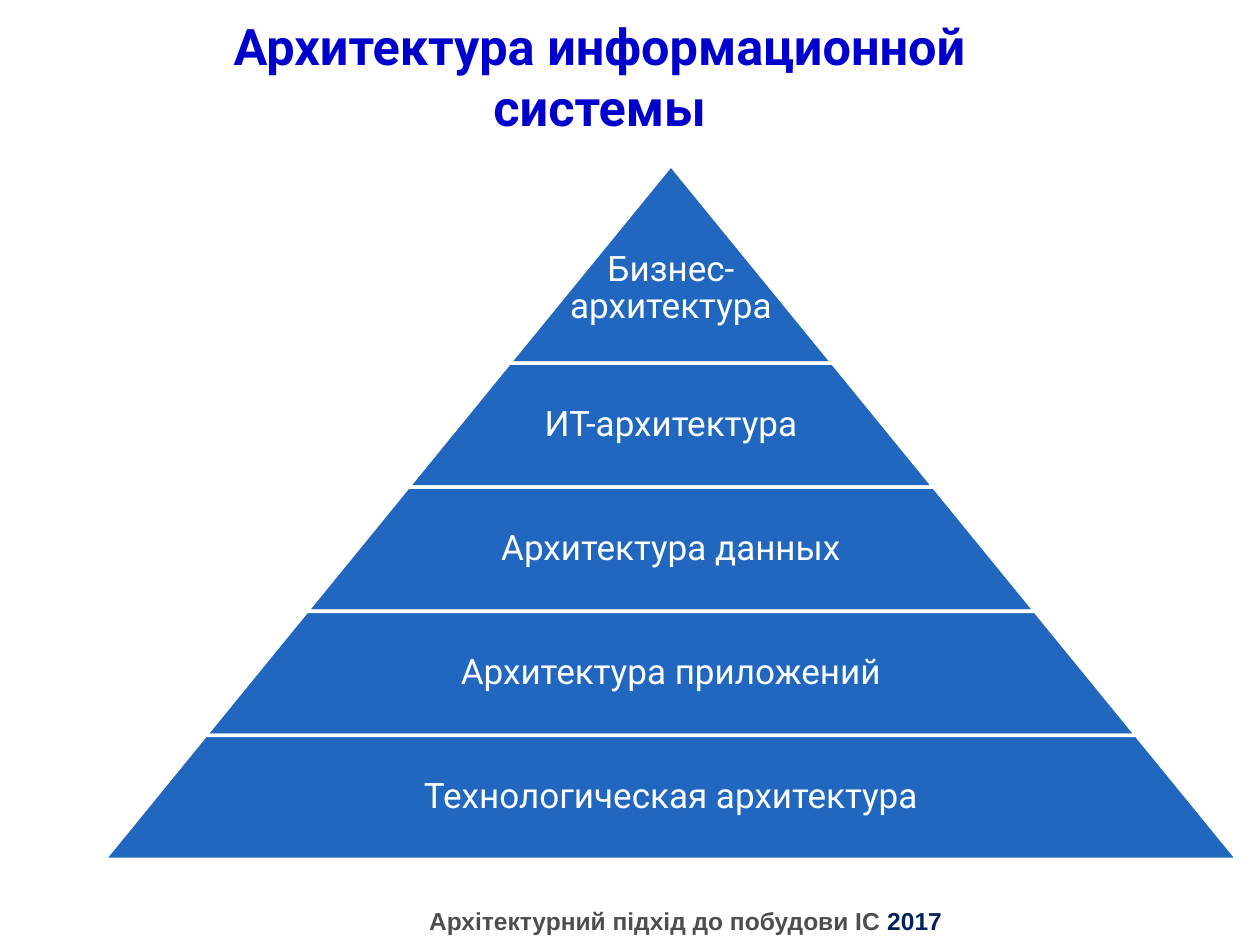
"""Build a slide with a five-level pyramid of information system architecture."""
from dataclasses import dataclass

from pptx import Presentation
from pptx.dml.color import RGBColor
from pptx.enum.shapes import MSO_SHAPE
from pptx.enum.text import MSO_ANCHOR, PP_ALIGN
from pptx.util import Pt

TRAPEZOID = MSO_SHAPE.TRAPEZOID
MIDDLE = MSO_ANCHOR.MIDDLE
TOP = MSO_ANCHOR.TOP
CENTER = PP_ALIGN.CENTER

WHITE = RGBColor(0xFF, 0xFF, 0xFF)
BAND_BLUE = RGBColor(0x21, 0x67, 0xBF)
TITLE_BLUE = RGBColor(0x00, 0x00, 0xCC)
FOOTER_GRAY = RGBColor(0x4D, 0x4D, 0x4D)
YEAR_NAVY = RGBColor(0x00, 0x20, 0x60)

AXIS = 383.4
APEX = 94.3
SLOPE = 0.816
TIP_HEIGHT = 113.2
BAND_HEIGHT = 70.9
LABEL_SHARE = 0.65
LABEL_INSET = 2
TIP_LABEL_DROP = 28


@dataclass(frozen=True)
class Area:
    left: float
    top: float
    width: float
    height: float

    def lengths(self) -> tuple:
        return Pt(self.left), Pt(self.top), Pt(self.width), Pt(self.height)


@dataclass(frozen=True)
class Style:
    font: str
    size: float
    color: RGBColor
    bold: bool = False


@dataclass(frozen=True)
class Level:
    label: str
    height: float = BAND_HEIGHT
    label_share: float = LABEL_SHARE
    label_drop: float = 0


TITLE_STYLE = Style("Roboto", 28.8, TITLE_BLUE, True)
LABEL_STYLE = Style("Roboto", 20, WHITE)
FOOTER_STYLE = Style("Arial", 14, FOOTER_GRAY, True)
YEAR_STYLE = Style("Arial", 14, YEAR_NAVY, True)

LEVELS = (
    Level("Бизнес- архитектура", TIP_HEIGHT, 1, TIP_LABEL_DROP),
    Level("ИТ-архитектура"),
    Level("Архитектура данных"),
    Level("Архитектура приложений"),
    Level("Технологическая архитектура"),
)


def style_span(span, style: Style) -> None:
    span.font.name = style.font
    span.font.size = Pt(style.size)
    span.font.bold = style.bold
    span.font.color.rgb = style.color


def add_text(page, area: Area, text: str, style: Style, anchor=MIDDLE):
    box = page.shapes.add_textbox(*area.lengths())
    frame = box.text_frame
    frame.word_wrap = True
    frame.vertical_anchor = anchor
    frame.text = text
    para = frame.paragraphs[0]
    para.alignment = CENTER
    style_span(para.runs[0], style)
    return box


def add_band(page, area: Area) -> None:
    band = page.shapes.add_shape(TRAPEZOID, *area.lengths())
    band.adjustments[0] = SLOPE
    band.shadow.inherit = False
    band.fill.solid()
    band.fill.fore_color.rgb = BAND_BLUE
    band.line.color.rgb = WHITE
    band.line.width = Pt(2)


def add_label(page, area: Area, level: Level) -> None:
    box = add_text(page, area, level.label, LABEL_STYLE)
    frame = box.text_frame
    frame.margin_left = frame.margin_right = frame.margin_bottom = Pt(LABEL_INSET)
    frame.margin_top = Pt(LABEL_INSET + level.label_drop)
    frame.paragraphs[0].line_spacing = 0.9


def add_pyramid(page) -> None:
    top = APEX
    for level in LEVELS:
        width = 2 * SLOPE * (top + level.height - APEX)
        label_width = width * level.label_share
        add_band(page, Area(AXIS - width / 2, top, width, level.height))
        label_area = Area(AXIS - label_width / 2, top, label_width, level.height)
        add_label(page, label_area, level)
        top += level.height


def add_footer(page) -> None:
    area = Area(64.8, 514.1, 653.8, 24.5)
    box = add_text(page, area, "Архітектурний підхід до побудови ІС", FOOTER_STYLE, TOP)
    year = box.text_frame.paragraphs[0].add_run()
    year.text = " 2017"
    style_span(year, YEAR_STYLE)


def main() -> None:
    deck = Presentation()
    deck.slide_width, deck.slide_height = Pt(720), Pt(540)
    page = deck.slides.add_slide(deck.slide_layouts[6])
    add_footer(page)
    title = add_text(page, Area(121.7, 2.2, 442.1, 82.1),
                     "Архитектура информационной системы", TITLE_STYLE)
    title.fill.solid()
    title.fill.fore_color.rgb = WHITE
    add_pyramid(page)
    deck.save("out.pptx")


if __name__ == "__main__":
    main()
